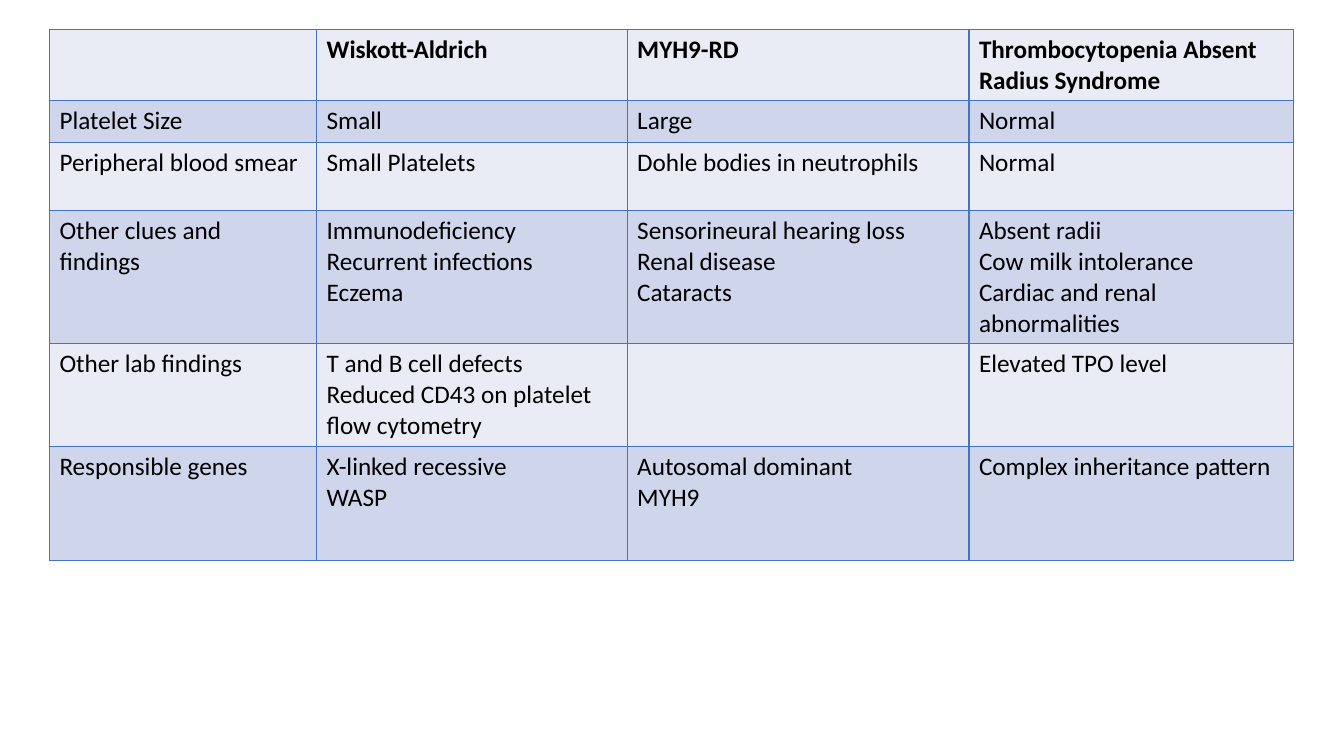
import pptx
import pptx.util
import pptx.dml.color
import pptx.oxml
import pptx.oxml.ns

Inches = pptx.util.Inches

COLORS = {"text": "000000", "border": "4472C4", "light": "E9EBF5", "dark": "CFD5EA"}

COLUMN_WIDTHS = [2.65, 3.08, 3.39, 3.22]
ROW_HEIGHTS = [0.47, 0.41, 0.68, 1.06, 0.67, 1.13]

DISORDERS = [
    ["", "Wiskott-Aldrich", "MYH9-RD", "Thrombocytopenia Absent Radius Syndrome"],
    ["Platelet Size", "Small", "Large", "Normal"],
    ["Peripheral blood smear", "Small Platelets", "Dohle bodies in neutrophils", "Normal"],
    [
        "Other clues and findings",
        "Immunodeficiency\nRecurrent infections\nEczema",
        "Sensorineural hearing loss\nRenal disease\nCataracts",
        "Absent radii\nCow milk intolerance\nCardiac and renal abnormalities",
    ],
    [
        "Other lab findings",
        "T and B cell defects\nReduced CD43 on platelet flow cytometry",
        "",
        "Elevated TPO level",
    ],
    [
        "Responsible genes",
        "X-linked recessive\nWASP",
        "Autosomal dominant\nMYH9",
        "Complex inheritance pattern",
    ],
]


class SlideBuilder:
    def __init__(self, slide, colors):
        self.slide = slide
        self.colors = colors
        self.font_format = {"name": "Calibri", "size": pptx.util.Pt(18)}

    def color(self, key):
        return pptx.dml.color.RGBColor.from_string(self.colors[key])

    def borders(self, cell):
        properties = cell._tc.get_or_add_tcPr()
        for side in ("lnL", "lnR", "lnT", "lnB"):
            properties.append(pptx.oxml.parse_xml(
                f'<a:{side} {pptx.oxml.ns.nsdecls("a")} w="{pptx.util.Pt(1)}">'
                f'<a:solidFill><a:srgbClr val="{self.colors["border"]}"/></a:solidFill>'
                f'</a:{side}>'
            ))

    def cell(self, cell, content, fill, bold):
        self.borders(cell)
        cell.fill.solid()
        cell.fill.fore_color.rgb = self.color(fill)
        cell.text_frame.text = content
        for paragraph in cell.text_frame.paragraphs:
            for attribute, value in {**self.font_format, "bold": bold}.items():
                setattr(paragraph.font, attribute, value)
            paragraph.font.color.rgb = self.color("text")

    def table(self, left, top, widths, heights, rows):
        table = self.slide.shapes.add_table(
            len(heights), len(widths), Inches(left), Inches(top),
            Inches(sum(widths)), Inches(sum(heights)),
        ).table
        for column, width in zip(table.columns, widths):
            column.width = Inches(width)
        for index, (row, height) in enumerate(zip(table.rows, heights)):
            row.height = Inches(height)
            fill = "dark" if index % 2 else "light"
            for cell, content in zip(row.cells, rows[index]):
                self.cell(cell, content, fill, index == 0)


def main():
    presentation = pptx.Presentation()
    presentation.slide_width = Inches(13.33)
    presentation.slide_height = Inches(7.5)
    slide = presentation.slides.add_slide(presentation.slide_layouts[6])
    builder = SlideBuilder(slide, COLORS)
    builder.table(0.49, 0.29, COLUMN_WIDTHS, ROW_HEIGHTS, DISORDERS)
    presentation.save("out.pptx")


if __name__ == "__main__":
    main()
